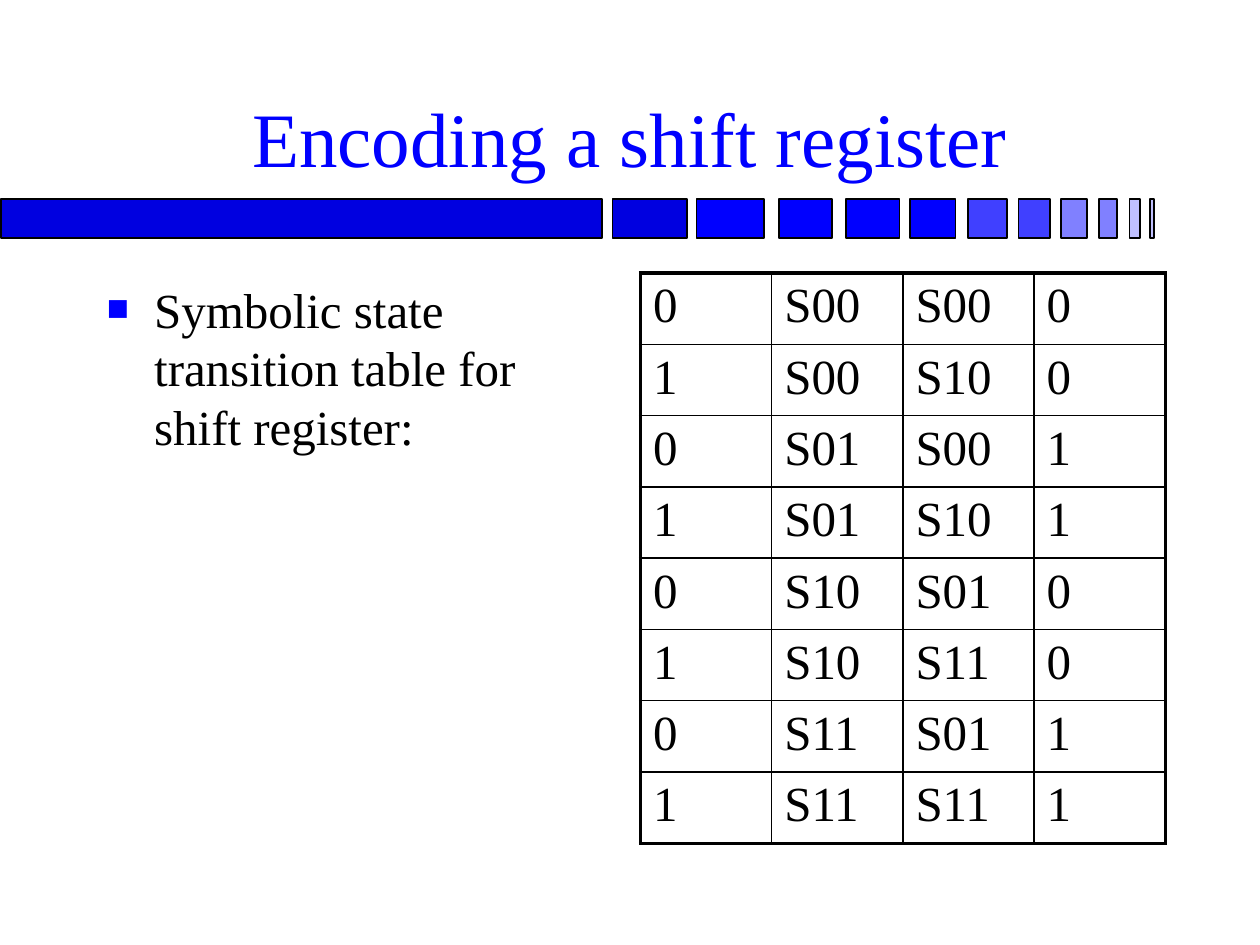
from dataclasses import dataclass

from lxml import etree
from pptx import Presentation
from pptx.dml.color import RGBColor
from pptx.enum.shapes import MSO_SHAPE
from pptx.enum.text import MSO_ANCHOR, MSO_AUTO_SIZE, PP_ALIGN
from pptx.oxml.ns import qn
from pptx.util import Pt

RECTANGLE = MSO_SHAPE.RECTANGLE
BOTTOM, TOP = MSO_ANCHOR.BOTTOM, MSO_ANCHOR.TOP
CENTER, LEFT = PP_ALIGN.CENTER, PP_ALIGN.LEFT
NO_AUTOFIT = MSO_AUTO_SIZE.NONE
TITLE_ONLY = 5


@dataclass(frozen=True)
class Theme:
    """Colours, font and sizes of the slide."""
    font: str = "Times New Roman"
    accent: str = "0000FF"
    ink: str = "000000"
    title_size: float = 44
    body_size: float = 28
    thin: float = 1
    thick: float = 2.25


THEME = Theme()
BARS = [
    (0.5, 343.5, "0000E0"), (350, 42.5, "0000E0"), (398, 38.5, "0000FF"),
    (445, 30.5, "0000FF"), (483.5, 30.5, "0000FF"), (520, 26, "0000FF"),
    (553, 22.5, "4040FF"), (582, 18, "4040FF"), (606.5, 14.5, "8080FF"),
    (628, 10.5, "8080FF"), (645.5, 6, "C0C0FF"), (657, 2.5, "C0C0FF"),
]
TRANSITIONS = [
    ("0", "S00", "S00", "0"), ("1", "S00", "S10", "0"),
    ("0", "S01", "S00", "1"), ("1", "S01", "S10", "1"),
    ("0", "S10", "S01", "0"), ("1", "S10", "S11", "0"),
    ("0", "S11", "S01", "1"), ("1", "S11", "S11", "1"),
]


def add_node(parent, tag, **attributes):
    """Append a drawing element and return it."""
    return etree.SubElement(parent, qn(tag), attributes)


def format_text(text_frame, size, color, alignment=LEFT):
    """Give every run of a text frame its font and alignment."""
    for paragraph in text_frame.paragraphs:
        paragraph.alignment = alignment
        for run in paragraph.runs:
            run.font.name = THEME.font
            run.font.size = Pt(size)
            run.font.color.rgb = RGBColor.from_string(color)


def add_space_before(paragraph):
    """Put a fifth of a line before a paragraph and return its properties."""
    properties = paragraph._p.get_or_add_pPr()
    add_node(add_node(properties, "a:spcBef"), "a:spcPct", val="20000")
    return properties


def place_title(slide, box, text):
    """Move and format the title placeholder."""
    title = slide.shapes.title
    title.left, title.top, title.width, title.height = map(Pt, box)
    text_frame = title.text_frame
    text_frame.text = text
    text_frame.auto_size = NO_AUTOFIT
    text_frame.vertical_anchor = BOTTOM
    format_text(text_frame, THEME.title_size, THEME.accent, CENTER)


def add_fading_bar(slide, box):
    """Draw the row of shrinking, fading rectangles."""
    left, top, height = box
    for offset, width, color in BARS:
        shape = slide.shapes.add_shape(
            RECTANGLE, Pt(left + offset), Pt(top), Pt(width), Pt(height))
        shape.shadow.inherit = False
        shape.fill.solid()
        shape.fill.fore_color.rgb = RGBColor.from_string(color)
        shape.line.color.rgb = RGBColor.from_string(THEME.ink)
        shape.line.width = Pt(THEME.thin)


def add_bullet_text(slide, box, text):
    """Write one paragraph with a square bullet."""
    text_frame = slide.shapes.add_textbox(*map(Pt, box)).text_frame
    text_frame.word_wrap = True
    text_frame.auto_size = NO_AUTOFIT
    text_frame.vertical_anchor = TOP
    text_frame.text = text
    format_text(text_frame, THEME.body_size, THEME.ink)
    properties = add_space_before(text_frame.paragraphs[0])
    properties.set("marL", str(Pt(27)))
    properties.set("indent", str(Pt(-27)))
    add_node(add_node(properties, "a:buClr"), "a:srgbClr", val=THEME.accent)
    add_node(properties, "a:buSzPct", val="75000")
    add_node(properties, "a:buFont", typeface=THEME.font)
    add_node(properties, "a:buChar", char="■")


def set_borders(cell, outer_sides):
    """Draw the four cell borders, thick on the outer sides."""
    properties = cell._tc.get_or_add_tcPr()
    for position, side in enumerate("LRTB"):
        width = THEME.thick if side in outer_sides else THEME.thin
        line = add_node(properties, f"a:ln{side}", w=str(Pt(width)))
        add_node(add_node(line, "a:solidFill"), "a:srgbClr", val=THEME.ink)
        properties.insert(position, line)


def add_transition_table(slide, box):
    """Build the state transition table."""
    left, top, width, height = box
    row_count, column_count = len(TRANSITIONS), len(TRANSITIONS[0])
    table = slide.shapes.add_table(
        row_count, column_count, Pt(left), Pt(top), Pt(width), Pt(height)).table
    table.first_row = table.horz_banding = False
    for row_index, values in enumerate(TRANSITIONS):
        for column_index, value in enumerate(values):
            cell = table.cell(row_index, column_index)
            cell.text_frame.text = value
            cell.fill.background()
            format_text(cell.text_frame, THEME.body_size, THEME.ink)
            add_space_before(cell.text_frame.paragraphs[0])
            edges = {"L": column_index == 0, "R": column_index == column_count - 1,
                     "T": row_index == 0, "B": row_index == row_count - 1}
            set_borders(cell, [side for side, is_outer in edges.items() if is_outer])


def main():
    """Build and save the slide."""
    presentation = Presentation()
    presentation.slide_width, presentation.slide_height = Pt(720), Pt(540)
    slide = presentation.slides.add_slide(presentation.slide_layouts[TITLE_ONLY])
    add_fading_bar(slide, (0, 113.75, 22.5))
    place_title(slide, (54, 15, 612, 93), "Encoding a shift register")
    add_bullet_text(slide, (54, 156, 300, 324),
                    "Symbolic state transition table for shift register:")
    add_transition_table(slide, (366, 156, 300, 326))
    presentation.save("out.pptx")


if __name__ == "__main__":
    main()
